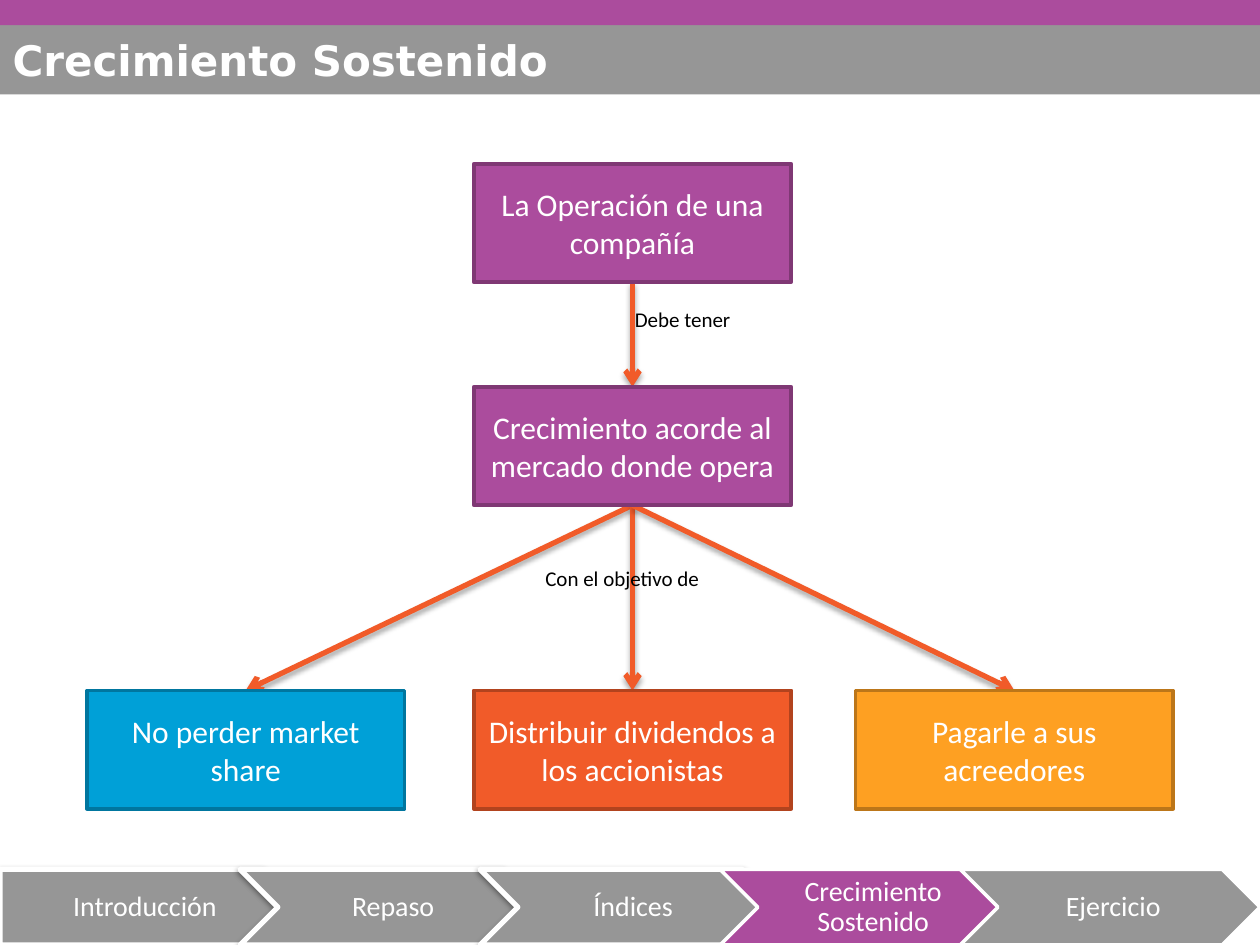
import pptx
import pptx.util
import pptx.dml.color
import pptx.enum.shapes
import pptx.enum.text
import pptx.oxml.ns
import lxml.etree

Inches = pptx.util.Inches
Pt = pptx.util.Pt
RGB = pptx.dml.color.RGBColor
Kind = pptx.enum.shapes.MSO_SHAPE
Align = pptx.enum.text.PP_ALIGN
Anchor = pptx.enum.text.MSO_ANCHOR
qn = pptx.oxml.ns.qn

WHITE = RGB(0xFF, 0xFF, 0xFF)
BLACK = RGB(0, 0, 0)
GRAY = RGB(0x96, 0x96, 0x96)
PURPLE = RGB(0xAB, 0x4C, 0x9D)
PLUM = RGB(0x7F, 0x38, 0x74)
BLUE = RGB(0x00, 0xA0, 0xD7)
NAVY = RGB(0x00, 0x76, 0x9F)
ORANGE = RGB(0xF1, 0x5B, 0x29)
RUST = RGB(0xB2, 0x43, 0x1E)
AMBER = RGB(0xFE, 0xA0, 0x22)
BROWN = RGB(0xBC, 0x76, 0x19)

TITLE = "Crecimiento Sostenido"
STEPS = ["Introducción", "Repaso", "Índices", "Crecimiento Sostenido", "Ejercicio"]
ACTIVE = 3
BOXES = {
    "firm": ("La Operación de una compañía", 1, 0, PURPLE, PLUM),
    "growth": ("Crecimiento acorde al mercado donde opera", 1, 1, PURPLE, PLUM),
    "share": ("No perder market share", 0, 2, BLUE, NAVY),
    "payout": ("Distribuir dividendos a los accionistas", 1, 2, ORANGE, RUST),
    "debt": ("Pagarle a sus acreedores", 2, 2, AMBER, BROWN),
}
LINKS = [("growth", "share"), ("growth", "payout"), ("growth", "debt"), ("firm", "growth")]
LABELS = [("Debe tener", 4.94, 2.38), ("Con el objetivo de", 4.23, 4.44)]

WIDTH, HEIGHT = 10, 7.5
COLS = [0.69, 3.76, 6.79]
ROWS = [1.3, 3.07, 5.48]
BOX_W, BOX_H = 2.52, 0.94
STEP_W, STEP_H = 2.38, 0.6
PITCH = (WIDTH - STEP_W) / (len(STEPS) - 1)


def style(para, size, color, font="Calibri", align=Align.CENTER):
    para.alignment = align
    para.font.size = Pt(size)
    para.font.name = font
    para.font.color.rgb = color


def effect(shape, alpha=0, dist=0):
    props = shape._element.spPr
    group = lxml.etree.SubElement(props, qn("a:effectLst"))
    if alpha:
        cast = lxml.etree.SubElement(
            group, qn("a:outerShdw"), blurRad="40000", dist=str(dist),
            dir="5400000", rotWithShape="0")
        tint = lxml.etree.SubElement(cast, qn("a:srgbClr"), val="000000")
        lxml.etree.SubElement(tint, qn("a:alpha"), val=str(alpha * 1000))


def block(kind, left, top, width, height, fill, edge=None, weight=2, shade=()):
    shape = slide.shapes.add_shape(
        kind, Inches(left), Inches(top), Inches(width), Inches(height))
    shape.fill.solid()
    shape.fill.fore_color.rgb = fill
    if edge is None:
        shape.line.fill.background()
    else:
        shape.line.color.rgb = edge
        shape.line.width = Pt(weight)
    effect(shape, *shade)
    return shape


def write(shape, text, size):
    frame = shape.text_frame
    frame.word_wrap = True
    frame.vertical_anchor = Anchor.MIDDLE
    frame.text = text
    style(frame.paragraphs[0], size, WHITE)
    return frame


def arrow(start, end):
    x1, y1 = COLS[start[1]] + BOX_W / 2, ROWS[start[2]] + BOX_H
    x2, y2 = COLS[end[1]] + BOX_W / 2, ROWS[end[2]]
    link = slide.shapes.add_connector(
        pptx.enum.shapes.MSO_CONNECTOR.STRAIGHT,
        Inches(x1), Inches(y1), Inches(x2), Inches(y2))
    link.line.color.rgb = ORANGE
    link.line.width = Pt(3)
    stroke = link._element.spPr.find(qn("a:ln"))
    lxml.etree.SubElement(stroke, qn("a:tailEnd"), type="arrow")
    effect(link, 35, 23000)


deck = pptx.Presentation()
deck.slide_width, deck.slide_height = Inches(WIDTH), Inches(HEIGHT)
slide = deck.slides.add_slide(deck.slide_layouts[5])

title = slide.shapes.title
title.left, title.top = Inches(0), Inches(0.2)
title.width, title.height = Inches(WIDTH), Inches(0.55)
title.fill.solid()
title.fill.fore_color.rgb = GRAY
frame = title.text_frame
frame.text = TITLE
frame.auto_size = pptx.enum.text.MSO_AUTO_SIZE.NONE
frame.vertical_anchor = Anchor.MIDDLE
style(frame.paragraphs[0], 24, WHITE, "DejaVu Sans", Align.LEFT)
frame.paragraphs[0].font.bold = True
block(Kind.RECTANGLE, 0, 0, WIDTH, 0.2, PURPLE)

for i, step in enumerate(STEPS):
    past = i < ACTIVE
    shape = block(
        Kind.CHEVRON if i else Kind.PENTAGON, i * PITCH, HEIGHT - STEP_H,
        STEP_W, STEP_H, PURPLE if i == ACTIVE else GRAY, WHITE,
        3 if past else 2, (38, 20000) if past else ())
    frame = write(shape, step, 16)
    frame.margin_left = Inches(0.07 if i else 0.09)
    frame.margin_right = Inches(0.02)
    frame.paragraphs[0].line_spacing = 0.9

for start, end in LINKS:
    arrow(BOXES[start], BOXES[end])

for text, col, row, fill, edge in BOXES.values():
    shape = block(Kind.RECTANGLE, COLS[col], ROWS[row], BOX_W, BOX_H, fill, edge)
    write(shape, text, 18)

for text, left, top in LABELS:
    label = slide.shapes.add_textbox(Inches(left), Inches(top), Inches(1.77), Inches(0.3))
    label.text_frame.word_wrap = True
    label.text_frame.text = text
    style(label.text_frame.paragraphs[0], 12, BLACK, align=Align.LEFT)

deck.save("out.pptx")
